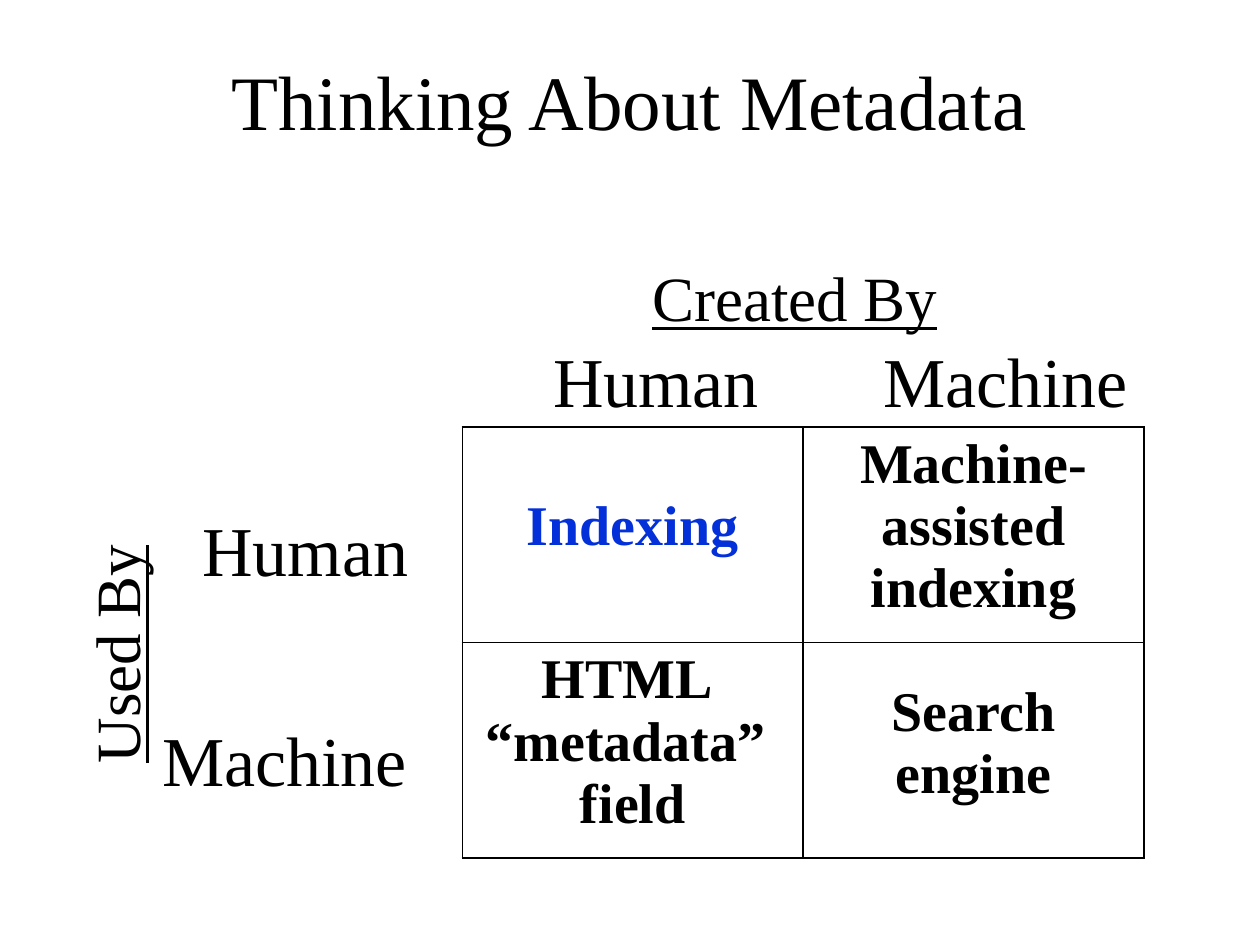
from lxml import etree
from pptx import Presentation
from pptx import util as u
from pptx.dml.color import RGBColor
from pptx.enum import text as t
from pptx.oxml.ns import qn

Pt = u.Pt
FONT = "Times New Roman"
HUES = {"ink": "000000", "blue": "0330D8", "paper": "FFFFFF"}
WIDE = {"Human": 133.2, "Machine": 156.2}

# Cell text lines, colour and top margin, by row
CELLS = [
    [(["Indexing"], "blue", 39), (["Machine-assisted indexing"], "ink", 3.6)],
    [(["HTML ", "“metadata” ", "field"], "ink", 3.6),
     (["Search engine"], "ink", 22)],
]


def write(para, words, size, hue="ink", bold=False, under=False):
    run = para.add_run()
    run.text = words
    font = run.font
    font.name, font.size = FONT, Pt(size)
    font.bold, font.underline = bold, under
    font.color.rgb = RGBColor.from_string(HUES[hue])


def label(slide, box, words, size, under=False, turn=0):
    shape = slide.shapes.add_textbox(*[Pt(n) for n in box])
    shape.rotation = turn
    frame = shape.text_frame
    frame.word_wrap = False
    frame.auto_size = t.MSO_AUTO_SIZE.SHAPE_TO_FIT_TEXT
    write(frame.paragraphs[0], words, size, under=under)


def title(slide, box):
    frame = slide.shapes.add_textbox(*[Pt(n) for n in box]).text_frame
    frame.word_wrap = True
    frame.vertical_anchor = t.MSO_ANCHOR.MIDDLE
    para = frame.paragraphs[0]
    para.alignment = t.PP_ALIGN.CENTER
    write(para, "Thinking About Metadata", 44)


def border(cell):
    props = cell._tc.get_or_add_tcPr()
    for side in ("lnL", "lnR", "lnT", "lnB"):
        line = etree.SubElement(props, qn("a:" + side), w=str(Pt(1)))
        fill = etree.SubElement(line, qn("a:solidFill"))
        etree.SubElement(fill, qn("a:srgbClr"), val=HUES["ink"])


def grid(slide, box):
    table = slide.shapes.add_table(2, 2, *[Pt(n) for n in box]).table
    table.first_row = table.horz_banding = False
    for i, row in enumerate(CELLS):
        for j, (lines, hue, top) in enumerate(row):
            cell = table.cell(i, j)
            border(cell)
            cell.fill.solid()
            cell.fill.fore_color.rgb = RGBColor.from_string(HUES["paper"])
            cell.margin_top = Pt(top)
            frame = cell.text_frame
            for k, words in enumerate(lines):
                para = frame.add_paragraph() if k else frame.paragraphs[0]
                para.alignment = t.PP_ALIGN.CENTER
                write(para, words, 32, hue, bold=True)


def axes(slide, box):
    left, top, wide, high = box
    # Column and row names end on shared right edges
    for i, (name, span) in enumerate(WIDE.items()):
        edge = left + 178 + i * 211.6
        label(slide, (edge - span, top - 54.7, span, 55.4), name, 40)
        edge = left - 22.4
        drop = top + 41.8 + i * 120.2
        label(slide, (edge - span, drop, span, 55.4), name, 40)
    # Axis headings
    label(slide, (left + 101.5, top - 100, 179.3, 51.1), "Created By", 36, True)
    label(slide, (left - 268.5, top + 103, 141.1, 51.1), "Used By", 36, True, 270)


def main():
    deck = Presentation()
    deck.slide_width, deck.slide_height = Pt(720), Pt(540)
    slide = deck.slides.add_slide(deck.slide_layouts[6])
    title(slide, (41.8, 12.2, 635.8, 90))
    box = (264.2, 244.1, 389.6, 246.2)
    grid(slide, box)
    axes(slide, box)
    deck.save("out.pptx")


if __name__ == "__main__":
    main()
